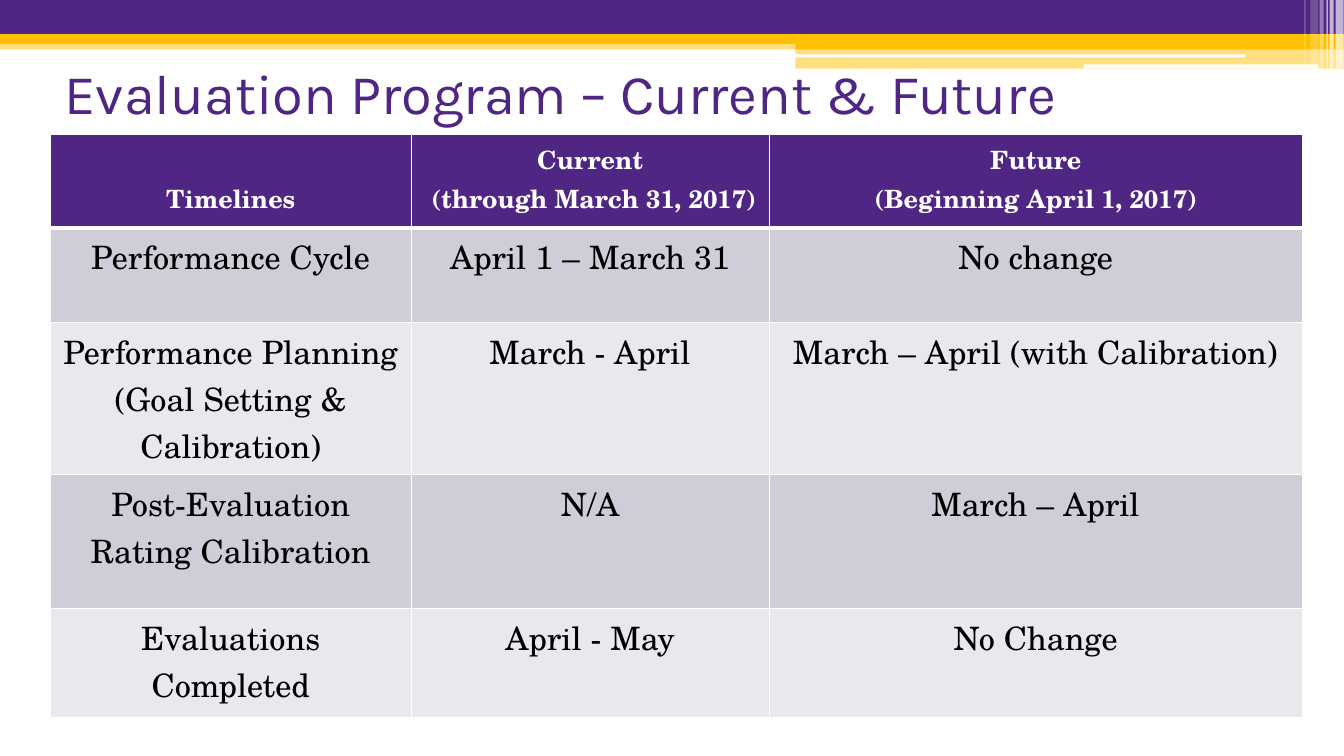
from dataclasses import dataclass

from lxml.etree import SubElement
from pptx import Presentation
from pptx.dml.color import RGBColor
from pptx.enum.shapes import MSO_SHAPE
from pptx.enum.text import MSO_ANCHOR, MSO_AUTO_SIZE, PP_ALIGN
from pptx.oxml.ns import qn
from pptx.util import Inches, Pt


@dataclass(frozen=True)
class Theme:
    purple: str = "4F2683"
    gold: str = "FFC000"
    white: str = "FFFFFF"
    black: str = "000000"
    row_tints: tuple = ("D0CDD9", "E9E8ED")
    title_font: str = "Karla"
    table_font: str = "TeX Gyre Schola"
    title_size: int = 40
    header_size: int = 18
    body_size: int = 23
    thin_rule: int = 1
    header_rule: int = 3


def write(frame, text, font, size, color, bold=False, align=PP_ALIGN.LEFT):
    for index, line in enumerate(text.split("\n")):
        paragraph = frame.add_paragraph() if index else frame.paragraphs[0]
        paragraph.alignment = align
        run = paragraph.add_run()
        run.text = line
        run.font.name = font
        run.font.size = Pt(size)
        run.font.bold = bold
        run.font.color.rgb = RGBColor.from_string(color)


class EvaluationSlide:
    def __init__(self, deck, theme):
        self.theme = theme
        self.width = deck.slide_width
        self.height = deck.slide_height
        self.slide = deck.slides.add_slide(deck.slide_layouts[5])

    def across(self, percent):
        return round(self.width * percent / 100)

    def down(self, percent):
        return round(self.height * percent / 100)

    def box(self, left, top, width, height):
        return self.across(left), self.down(top), self.across(width), self.down(height)

    def band(self, area, color, opacity=100, outline=MSO_SHAPE.RECTANGLE):
        band = self.slide.shapes.add_shape(outline, *self.box(*area))
        band.shadow.inherit = False
        band.line.fill.background()
        band.fill.solid()
        band.fill.fore_color.rgb = RGBColor.from_string(color)
        if opacity < 100:
            tone = band.element.spPr.find(f"{qn('a:solidFill')}/{qn('a:srgbClr')}")
            SubElement(tone, qn("a:alpha"), val=str(opacity * 1000))

    def title(self, text, area):
        heading = self.slide.shapes.title
        heading.left, heading.top, heading.width, heading.height = self.box(*area)
        frame = heading.text_frame
        frame.word_wrap = True
        frame.auto_size = MSO_AUTO_SIZE.NONE
        frame.vertical_anchor = MSO_ANCHOR.MIDDLE
        write(frame, text, self.theme.title_font, self.theme.title_size, self.theme.purple)
        heading.element.getparent().append(heading.element)

    def border(self, cell, side, points):
        properties = cell._tc.get_or_add_tcPr()
        rule = SubElement(properties, qn(f"a:{side}"), w=str(Pt(points)))
        fill = SubElement(rule, qn("a:solidFill"))
        SubElement(fill, qn("a:srgbClr"), val=self.theme.white)

    def cell(self, cell, text, row):
        theme = self.theme
        header = row == 0
        write(
            cell.text_frame,
            text,
            theme.table_font,
            theme.header_size if header else theme.body_size,
            theme.white if header else theme.black,
            bold=header,
            align=PP_ALIGN.CENTER,
        )
        if header:
            cell.vertical_anchor = MSO_ANCHOR.BOTTOM
            cell.margin_bottom = Inches(0.1)
        for side in ("lnL", "lnR", "lnT", "lnB"):
            under_header = (row, side) in ((0, "lnB"), (1, "lnT"))
            self.border(cell, side, theme.header_rule if under_header else theme.thin_rule)
        cell.fill.solid()
        tint = theme.purple if header else theme.row_tints[(row - 1) % 2]
        cell.fill.fore_color.rgb = RGBColor.from_string(tint)

    def table(self, left, top, widths, heights, content):
        area = self.box(left, top, sum(widths), sum(heights))
        timelines = self.slide.shapes.add_table(len(heights), len(widths), *area).table
        for column, width in zip(timelines.columns, widths):
            column.width = self.across(width)
        for row, height in zip(timelines.rows, heights):
            row.height = self.down(height)
        for row, entries in enumerate(content):
            for column, text in enumerate(entries):
                self.cell(timelines.cell(row, column), text, row)


TIMELINES = (
    ("Timelines", "Current\n (through March 31, 2017)", "Future\n(Beginning April 1, 2017)"),
    ("Performance Cycle", "April 1 – March 31", "No change"),
    (
        "Performance Planning (Goal Setting & Calibration)",
        "March - April",
        "March – April (with Calibration)",
    ),
    ("Post-Evaluation Rating Calibration", "N/A", "March – April"),
    ("Evaluations Completed", "April - May", "No Change"),
)

STRIPES = (
    (99.38, 0.6, 9.07, 65),
    (98.93, 0.3, 9.07, 65),
    (98.7, 0.1, 9.07, 60),
    (98.18, 0.3, 9.07, 40),
    (97.5, 0.6, 8.53, 20),
    (97.05, 0.1, 8.53, 30),
)


def main():
    deck = Presentation()
    deck.slide_width = Inches(13.33)
    deck.slide_height = Inches(7.5)
    theme = Theme()
    page = EvaluationSlide(deck, theme)

    page.band((0, 5.33, 100, 1.2), theme.gold, opacity=50)
    page.band((0, 0, 100, 4.53), theme.purple)
    page.band((0, 4.53, 100, 1.33), theme.gold)
    page.band((59.18, 5.2, 40.82, 1.33), theme.gold)
    page.band((59.18, 6.4, 40.82, 2.67), theme.gold, opacity=50)
    for slit in ((59.1, 7.2, 33.52, 0.4), (80.63, 8.53, 17.48, 0.53)):
        page.band(slit, theme.white, outline=MSO_SHAPE.ROUNDED_RECTANGLE)
    for left, width, height, opacity in STRIPES:
        page.band((left, 0, width, height), theme.white, opacity)

    page.title("Evaluation Program – Current & Future", (4.05, 4.4, 90, 15.6))
    page.table(
        3.75,
        17.8,
        widths=(26.85, 26.63, 39.68),
        heights=(12.13, 12.53, 17.6, 17.73, 14.4),
        content=TIMELINES,
    )
    deck.save("out.pptx")


if __name__ == "__main__":
    main()
